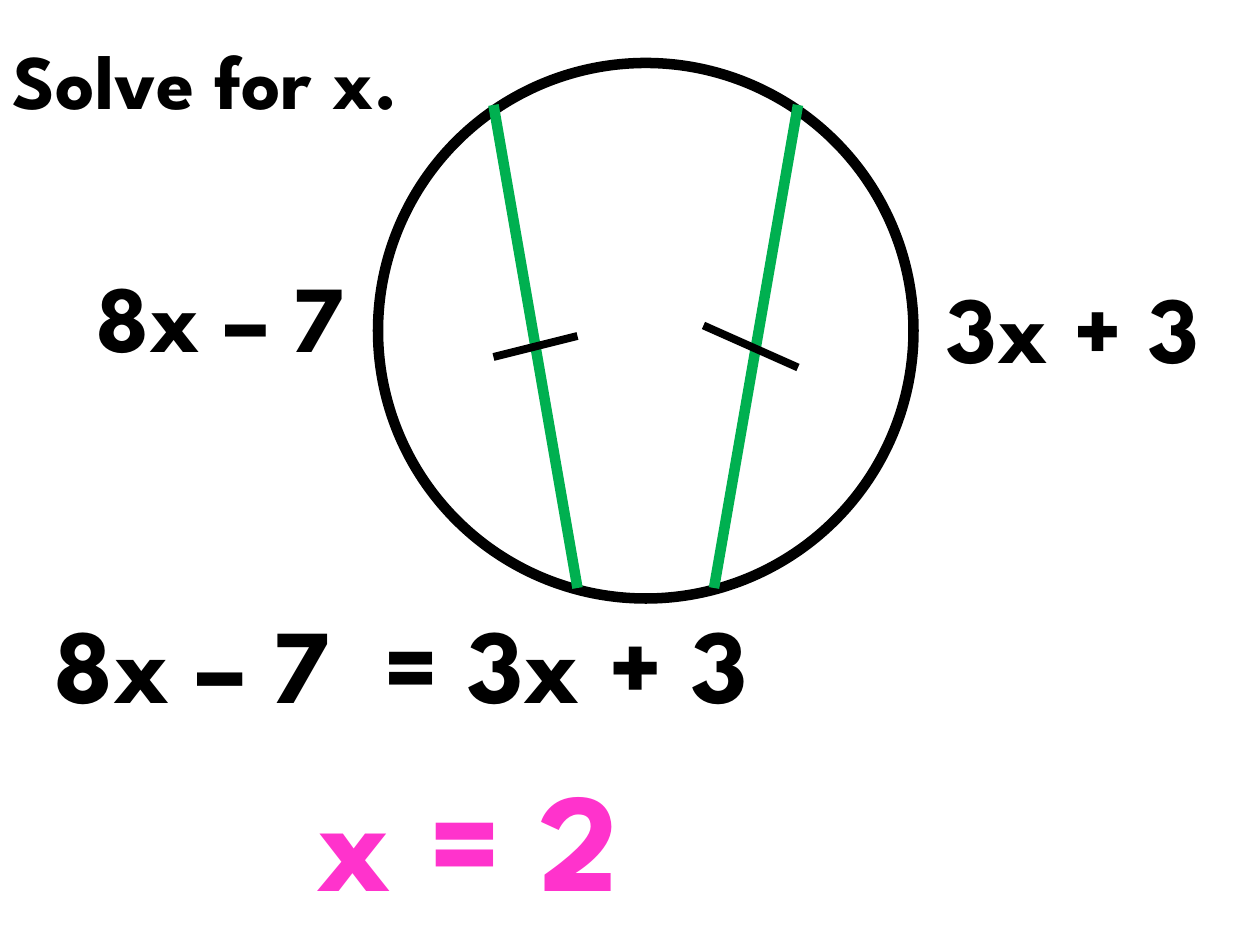
from dataclasses import dataclass

from lxml import etree
from pptx import Presentation
from pptx.dml.color import RGBColor
from pptx.enum.shapes import MSO_CONNECTOR, MSO_SHAPE
from pptx.enum.text import MSO_ANCHOR, MSO_AUTO_SIZE
from pptx.oxml.ns import qn
from pptx.util import Inches, Pt

STRAIGHT = MSO_CONNECTOR.STRAIGHT
OVAL = MSO_SHAPE.OVAL
TOP, MIDDLE = MSO_ANCHOR.TOP, MSO_ANCHOR.MIDDLE
GROW, FIXED = MSO_AUTO_SIZE.SHAPE_TO_FIT_TEXT, MSO_AUTO_SIZE.NONE
COLS, ROWS = 120, 90


@dataclass(frozen=True)
class Theme:
    font: str = "League Spartan"
    ink: str = "000000"
    chord: str = "00B050"
    answer: str = "FF33CC"
    title_size: float = 44
    label_size: float = 54
    equation_size: float = 60
    answer_size: float = 80
    thick: float = 6
    thin: float = 4.5


def write(tf, text, font, size, color, anchor=TOP, fit=GROW):
    tf.word_wrap = True
    tf.auto_size = fit
    tf.vertical_anchor = anchor
    r = tf.paragraphs[0].add_run()
    r.text = text
    r.font.name = font
    r.font.size = Pt(size)
    r.font.bold = True
    r.font.color.rgb = RGBColor.from_string(color)


class Board:
    def __init__(self, prs, theme):
        self.theme = theme
        self.s = prs.slides.add_slide(prs.slide_layouts[6])
        self.col = prs.slide_width / COLS
        self.row = prs.slide_height / ROWS

    def grid(self, x, y):
        return round(x * self.col), round(y * self.row)

    def stroke(self, line, color, width):
        line.color.rgb = RGBColor.from_string(color)
        line.width = Pt(width)

    def circle(self, x, y, size):
        sp = self.s.shapes.add_shape(OVAL, *self.grid(x, y), *self.grid(size, size))
        sp.shadow.inherit = False
        sp.fill.background()
        self.stroke(sp.line, self.theme.ink, self.theme.thick)

    def segment(self, start, end, color, width):
        cx = self.s.shapes.add_connector(STRAIGHT, *self.grid(*start), *self.grid(*end))
        self.stroke(cx.line, color, width)
        etree.SubElement(cx._element.spPr, qn("a:effectLst"))

    def text(self, text, x, y, w, h, size, color=None, **fmt):
        sp = self.s.shapes.add_textbox(*self.grid(x, y), *self.grid(w, h))
        write(sp.text_frame, text, self.theme.font, size, color or self.theme.ink, **fmt)


def main():
    prs = Presentation()
    prs.slide_width, prs.slide_height = Inches(10), Inches(7.5)
    theme = Theme()
    board = Board(prs, theme)

    board.circle(36, 6, 51)
    for start, end in (((47, 10), (55, 56)), ((76, 10), (68, 56))):
        board.segment(start, end, theme.chord, theme.thick)
    for start, end in (((47, 34), (55, 32)), ((67, 31), (76, 35))):
        board.segment(start, end, theme.ink, theme.thin)

    board.text("Solve for x.", 0, 0, 55.4, 15, theme.title_size, anchor=MIDDLE, fit=FIXED)
    board.text("8x – 7", 8, 24, 33, 12.1, theme.label_size)
    board.text("3x + 3", 89, 25, 32, 12.1, theme.label_size)
    board.text("8x – 7  = 3x + 3", 4, 56.4, 96, 13.3, theme.equation_size)
    board.text("x = 2", 29, 71, 44, 17.4, theme.answer_size, theme.answer)

    prs.save("out.pptx")


if __name__ == "__main__":
    main()
